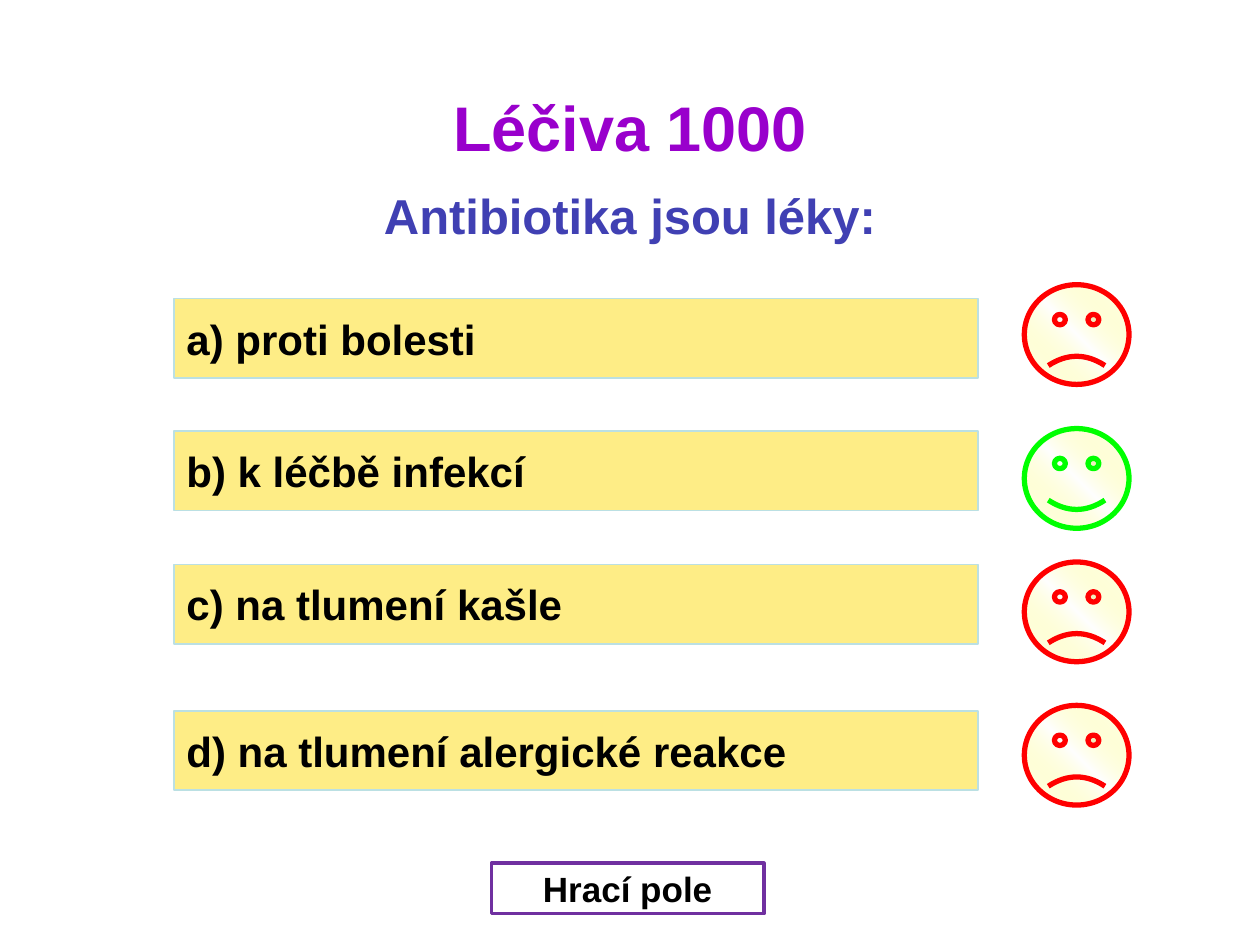
"""Builds a quiz slide with four answers, each marked by a face."""
from lxml import etree
from pptx import Presentation
from pptx.dml.color import RGBColor
from pptx.enum.shapes import MSO_SHAPE
from pptx.enum.text import MSO_ANCHOR, MSO_AUTO_SIZE, PP_ALIGN
from pptx.oxml import parse_xml
from pptx.util import Cm, Pt

BUTTON, SMILEY = MSO_SHAPE.ACTION_BUTTON_CUSTOM, MSO_SHAPE.SMILEY_FACE
TOP, MIDDLE = MSO_ANCHOR.TOP, MSO_ANCHOR.MIDDLE
LEFT, CENTER = PP_ALIGN.LEFT, PP_ALIGN.CENTER
FIXED = MSO_AUTO_SIZE.NONE

BLACK = RGBColor(0, 0, 0)
WHITE = RGBColor(255, 255, 255)
VIOLET = RGBColor(0x99, 0x00, 0xCC)
BLUE = RGBColor(0x40, 0x40, 0xB3)
PURPLE = RGBColor(0x70, 0x30, 0xA0)
SAND = RGBColor(0xFE, 0xED, 0x86)
AQUA = RGBColor(0xBB, 0xE0, 0xE3)
YELLOW = RGBColor(0xFF, 0xFF, 0x66)
RED = RGBColor(255, 0, 0)
GREEN = RGBColor(0, 255, 0)

NS = "http://schemas.openxmlformats.org/drawingml/2006/main"
GLOW = (
    f'<a:gsLst xmlns:a="{NS}">'
    f'<a:gs pos="0"><a:srgbClr val="{WHITE}"/></a:gs>'
    f'<a:gs pos="50000"><a:srgbClr val="{YELLOW}"><a:alpha val="0"/></a:srgbClr></a:gs>'
    f'<a:gs pos="100000"><a:srgbClr val="{WHITE}"/></a:gs></a:gsLst>'
)

ANSWERS = [
    ("a) proti bolesti", 6.02, 5.74, False),
    ("b) k léčbě infekcí", 8.69, 8.64, True),
    ("c) na tlumení kašle", 11.38, 11.33, False),
    ("d) na tlumení alergické reakce", 14.33, 14.22, False),
]


class Quiz:
    """Holds the style and the current slide."""

    face = "Arial"

    def __init__(self, slide):
        self.slide = slide

    def style(self, para, size, color, align):
        para.alignment = align
        font = para.font
        font.name, font.size, font.bold = self.face, Pt(size), True
        font.color.rgb = color

    def title(self, name, query):
        box = self.slide.shapes.title
        box.left, box.top, box.width, box.height = Cm(1), Cm(1.52), Cm(23.4), Cm(1.9)
        frame = box.text_frame
        frame.auto_size, frame.vertical_anchor = FIXED, TOP
        frame.margin_top = Cm(0.27)
        frame.text = f"{name}\n{query}"
        first, second = frame.paragraphs
        self.style(first, 36, VIOLET, CENTER)
        self.style(second, 28, BLUE, CENTER)
        second.space_before = Pt(12)

    def shape(self, kind, box, line, width):
        item = self.slide.shapes.add_shape(kind, *map(Cm, box))
        item.shadow.inherit = False
        item.line.color.rgb, item.line.width = line, Pt(width)
        return item

    def button(self, text, box, fill, line, width, size, align):
        item = self.shape(BUTTON, box, line, width)
        item.fill.solid()
        item.fill.fore_color.rgb = fill
        frame = item.text_frame
        frame.word_wrap, frame.vertical_anchor = True, MIDDLE
        frame.text = text
        self.style(frame.paragraphs[0], size, BLACK, align)

    def smiley(self, top, right):
        item = self.shape(SMILEY, (20.65, top, 2.11, 2.01), GREEN if right else RED, 3)
        item.adjustments[0] = 0.05 if right else -0.05
        item.fill.gradient()
        item.fill.gradient_angle = 45
        stops = next(item.element.iter(etree.QName(NS, "gsLst").text))
        stops.getparent().replace(stops, parse_xml(GLOW))


def main():
    deck = Presentation()
    deck.slide_width, deck.slide_height = Cm(25.4), Cm(19.05)
    quiz = Quiz(deck.slides.add_slide(deck.slide_layouts[5]))
    quiz.title("Léčiva 1000", "Antibiotika jsou léky:")
    for text, top, face, right in ANSWERS:
        quiz.button(text, (3.51, top, 16.2, 1.6), SAND, AQUA, 1, 24, LEFT)
        quiz.smiley(face, right)
    quiz.button("Hrací pole", (9.91, 17.4, 5.49, 1.02), WHITE, PURPLE, 2, 20, CENTER)
    deck.save("out.pptx")


if __name__ == "__main__":
    main()
